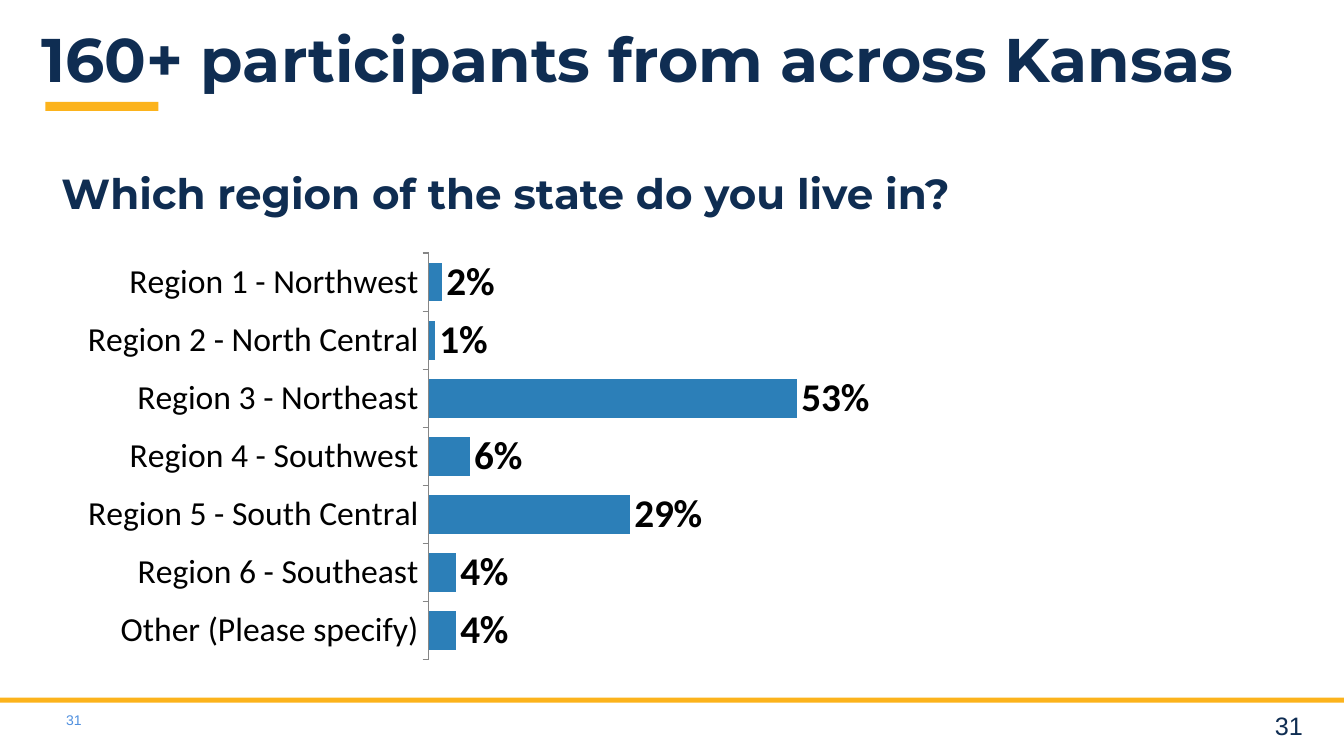
from lxml import etree
from pptx import Presentation
from pptx.chart.data import CategoryChartData
from pptx.dml.color import RGBColor
from pptx.enum.chart import XL_CHART_TYPE, XL_LABEL_POSITION, XL_TICK_MARK
from pptx.enum.shapes import MSO_SHAPE
from pptx.enum.text import MSO_ANCHOR, MSO_AUTO_SIZE, PP_ALIGN
from pptx.oxml import parse_xml
from pptx.oxml.ns import nsdecls, qn
from pptx.util import Inches, Pt

BAR_CLUSTERED = XL_CHART_TYPE.BAR_CLUSTERED
OUTSIDE_END = XL_LABEL_POSITION.OUTSIDE_END
TICK_OUTSIDE = XL_TICK_MARK.OUTSIDE
RECTANGLE = MSO_SHAPE.RECTANGLE
TOP = MSO_ANCHOR.TOP
NO_AUTOFIT = MSO_AUTO_SIZE.NONE
LEFT, RIGHT = PP_ALIGN.LEFT, PP_ALIGN.RIGHT

COLORS = {
    "navy": "0F2D52",
    "gold": "FCB31C",
    "bar": "2C7FB8",
    "pale": "5090DF",
    "axis": "868686",
    "black": "000000",
}

HEADING = "160+ participants from across Kansas"
QUESTION = "Which region of the state do you live in?"
PAGE = "31"
REGION_SHARES = {
    "Region 1 - Northwest": 0.02,
    "Region 2 - North Central": 0.01,
    "Region 3 - Northeast": 0.53,
    "Region 4 - Southwest": 0.06,
    "Region 5 - South Central": 0.29,
    "Region 6 - Southeast": 0.04,
    "Other (Please specify)": 0.04,
}
GOLD_RULES = [(0, 6.92, 13.33, 0.05), (0.45, 1.01, 1.12, 0.09)]
PLOT_AREA = {"x": 0.356, "y": 0.058, "w": 0.61, "h": 0.807}


def color(name):
    return RGBColor.from_string(COLORS[name])


def box(*lengths):
    return [Inches(length) for length in lengths]


def style_font(font, face, size, tint, bold=False):
    font.name = face
    font.size = Pt(size)
    font.bold = bold
    font.color.rgb = color(tint)


def write(holder, text, face, size, tint, bold=False, align=LEFT, spacing=1.0, inset=None):
    frame = holder.text_frame
    frame.text = text
    frame.word_wrap = True
    frame.auto_size = NO_AUTOFIT
    frame.vertical_anchor = TOP
    if inset is not None:
        frame.margin_left = frame.margin_right = Inches(inset)
        frame.margin_top = frame.margin_bottom = Inches(inset)
    paragraph = frame.paragraphs[0]
    paragraph.alignment = align
    paragraph.line_spacing = spacing
    style_font(paragraph.runs[0].font, face, size, tint, bold)


def add_gold_rule(slide, bounds):
    rule = slide.shapes.add_shape(RECTANGLE, *box(*bounds))
    rule.shadow.inherit = False
    rule.fill.solid()
    rule.fill.fore_color.rgb = color("gold")
    rule.line.fill.background()


def fix_plot_area(chart):
    plot_area = chart._chartSpace.chart.plotArea
    for old_layout in plot_area.findall(qn("c:layout")):
        plot_area.remove(old_layout)
    layout = parse_xml(f"<c:layout {nsdecls('c')}/>")
    manual = etree.SubElement(layout, qn("c:manualLayout"))
    settings = [("layoutTarget", "inner"), ("xMode", "edge"), ("yMode", "edge")]
    for tag, value in settings + list(PLOT_AREA.items()):
        etree.SubElement(manual, qn(f"c:{tag}")).set("val", str(value))
    plot_area.insert(0, layout)


def add_region_chart(slide):
    data = CategoryChartData(number_format="0%")
    data.categories = list(REGION_SHARES)
    data.add_series("Series 1", list(REGION_SHARES.values()))
    chart = slide.shapes.add_chart(BAR_CLUSTERED, *box(0.22, 2.22, 11.32, 5), data).chart
    chart.has_title = False
    chart.has_legend = False
    style_font(chart.font, "Arial", 18, "navy")

    regions = chart.category_axis
    regions.reverse_order = True
    regions.major_tick_mark = TICK_OUTSIDE
    regions.has_major_gridlines = False
    regions.format.line.color.rgb = color("axis")
    regions.format.line.width = Pt(0.75)
    style_font(regions.tick_labels.font, "Calibri", 24, "black")

    shares = chart.value_axis
    shares.visible = False
    shares.has_major_gridlines = False
    shares.minimum_scale, shares.maximum_scale = 0, 1

    bars = chart.plots[0]
    bars.vary_by_categories = False
    bars.gap_width = 50
    bars.series[0].format.fill.solid()
    bars.series[0].format.fill.fore_color.rgb = color("bar")
    bars.has_data_labels = True
    labels = bars.data_labels
    labels.show_value = True
    labels.number_format = "0%"
    labels.number_format_is_linked = False
    labels.position = OUTSIDE_END
    style_font(labels.font, "Calibri", 28, "black", bold=True)
    fix_plot_area(chart)


def main():
    deck = Presentation()
    deck.slide_width, deck.slide_height = box(13.33, 7.5)
    slide = deck.slides.add_slide(deck.slide_layouts[5])

    for bounds in GOLD_RULES:
        add_gold_rule(slide, bounds)

    question = slide.shapes.title
    question.left, question.top, question.width, question.height = box(0.51, 1.67, 12.72, 0.85)
    write(question, QUESTION, "Montserrat", 30, "navy", bold=True, spacing=0.9)

    add_region_chart(slide)

    heading = slide.shapes.add_textbox(*box(0.31, 0.24, 12.72, 0.85))
    write(heading, HEADING, "Montserrat", 44, "navy", bold=True, spacing=0.9)

    page_right = slide.shapes.add_textbox(*box(12.08, 7, 0.94, 0.35))
    write(page_right, PAGE, "Arial", 18, "navy", align=RIGHT)
    page_left = slide.shapes.add_textbox(*box(0.22, 7.06, 0.59, 0.21))
    write(page_left, PAGE, "Arial", 10, "pale", align=RIGHT, inset=0)

    deck.save("out.pptx")


if __name__ == "__main__":
    main()
